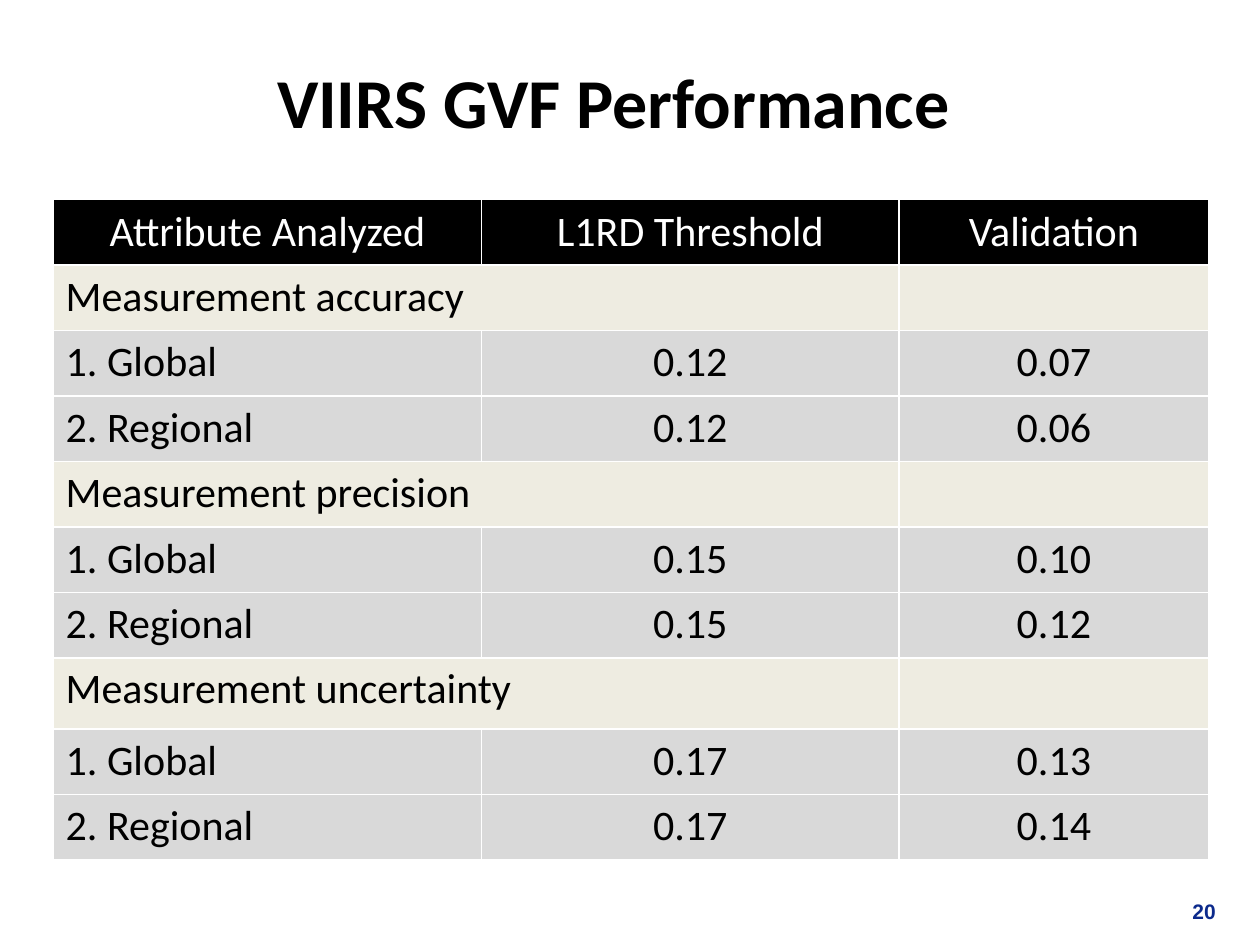
from lxml.etree import SubElement
from pptx import Presentation
from pptx.dml.color import RGBColor
from pptx.enum.text import MSO_ANCHOR as ANCHOR, PP_ALIGN as ALIGN
from pptx.oxml.ns import qn
from pptx.util import Cm, Pt

# Content
TITLE = "VIIRS GVF Performance"
PAGE = "20"
HEADERS = ("Attribute Analyzed", "L1RD Threshold", "Validation")
# (section, row height in cm, rows)
SECTIONS = [
    ("Measurement accuracy", 1.32,
     [("1. Global", "0.12", "0.07"), ("2. Regional", "0.12", "0.06")]),
    ("Measurement precision", 1.32,
     [("1. Global", "0.15", "0.10"), ("2. Regional", "0.15", "0.12")]),
    ("Measurement uncertainty", 1.44,
     [("1. Global", "0.17", "0.13"), ("2. Regional", "0.17", "0.14")]),
]
COL_WIDTHS = (8.64, 8.41, 6.25)
ROW_HEIGHT = 1.32

BLACK = RGBColor(0, 0, 0)
WHITE = RGBColor(255, 255, 255)
CREAM = RGBColor(0xEE, 0xEC, 0xE1)
GREY = RGBColor(0xD9, 0xD9, 0xD9)
NAVY = RGBColor(0x0C, 0x2A, 0x8C)


def write(tf, text, size, color, align, font="Calibri", bold=False):
    tf.text = text
    p = tf.paragraphs[0]
    p.alignment = align
    for r in p.runs:
        r.font.name, r.font.size, r.font.bold = font, Pt(size), bold
        r.font.color.rgb = color


def add_borders(cell):
    tc_pr = cell._tc.get_or_add_tcPr()
    for i, side in enumerate(("a:lnL", "a:lnR", "a:lnT", "a:lnB")):
        ln = tc_pr.makeelement(qn(side), {"w": str(Pt(1))})
        SubElement(SubElement(ln, qn("a:solidFill")), qn("a:srgbClr"), val=str(WHITE))
        tc_pr.insert(i, ln)


prs = Presentation()
prs.slide_width, prs.slide_height = Cm(25.4), Cm(19.05)
s = prs.slides.add_slide(prs.slide_layouts[5])

# Title
title = s.shapes.title
title.left, title.top, title.width, title.height = Cm(1.47), Cm(1.07), Cm(21.79), Cm(1.9)
title.text_frame.vertical_anchor = ANCHOR.MIDDLE
write(title.text_frame, TITLE, 40, BLACK, ALIGN.CENTER, bold=True)

# Table rows: (texts, height, fill, is section)
rows = [(HEADERS, ROW_HEIGHT, BLACK, False)]
for section, height, values in SECTIONS:
    rows.append(((section, "", ""), height, CREAM, True))
    rows += [(v, ROW_HEIGHT, GREY, False) for v in values]

table = s.shapes.add_table(
    len(rows), len(HEADERS), Cm(1.07), Cm(4.02),
    Cm(sum(COL_WIDTHS)), Cm(sum(row[1] for row in rows))).table
for column, width in zip(table.columns, COL_WIDTHS):
    column.width = Cm(width)

for i, (texts, height, fill, is_section) in enumerate(rows):
    table.rows[i].height = Cm(height)
    header = i == 0
    for j, text in enumerate(texts):
        cell = table.cell(i, j)
        cell.fill.solid()
        cell.fill.fore_color.rgb = fill
        cell.vertical_anchor = ANCHOR.MIDDLE if header else ANCHOR.TOP
        add_borders(cell)
        if text:
            write(cell.text_frame, text, 24, WHITE if header else BLACK,
                  ALIGN.CENTER if header or j else ALIGN.LEFT)
    if is_section:
        table.cell(i, 0).merge(table.cell(i, 1))

# Page number
tf = s.shapes.add_textbox(Cm(19.48), Cm(17.83), Cm(5.28), Cm(1.07)).text_frame
tf.word_wrap = True
tf.vertical_anchor = ANCHOR.MIDDLE
write(tf, PAGE, 12, NAVY, ALIGN.RIGHT, font="Arial", bold=True)

prs.save("out.pptx")
